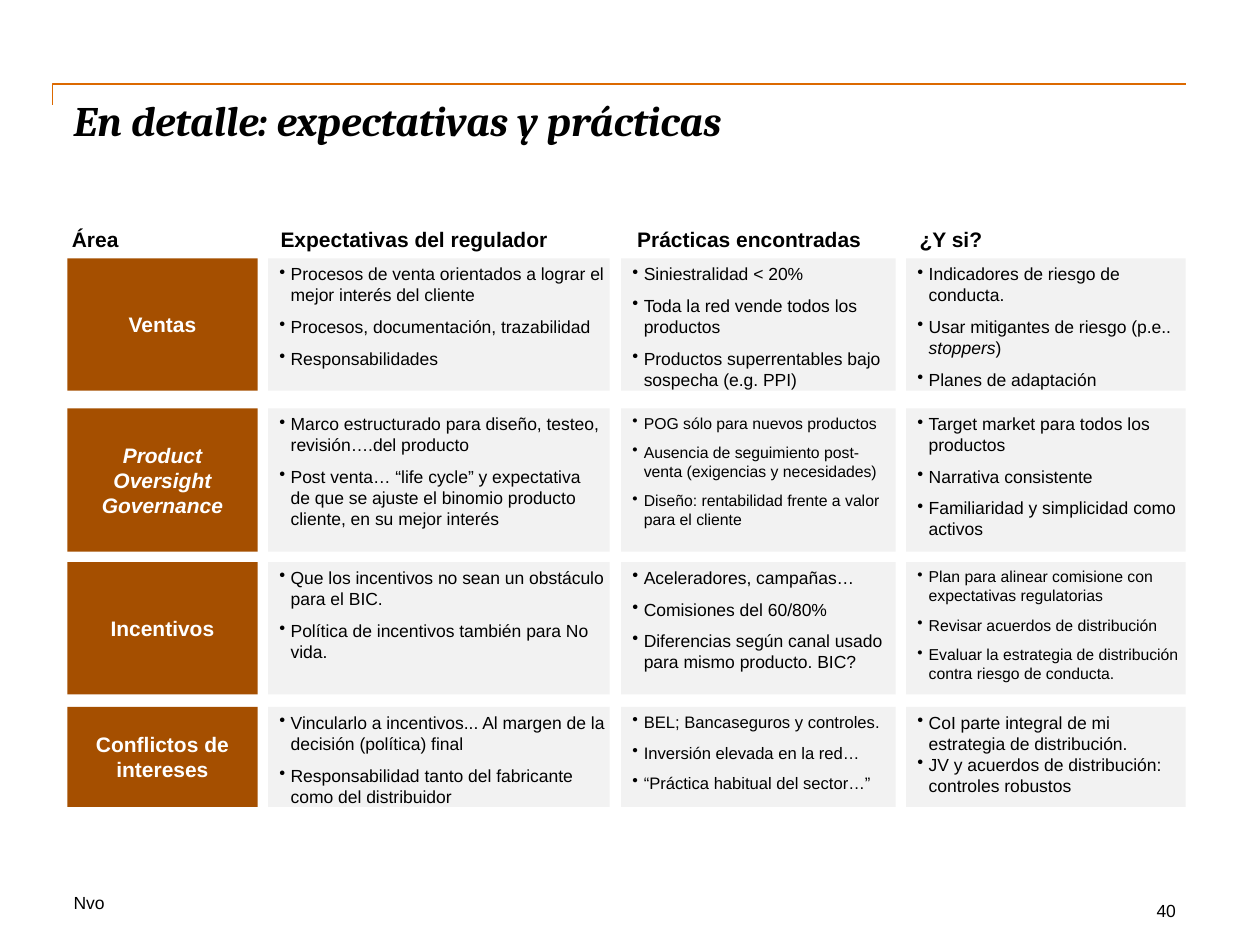
import lxml.etree
import pptx
import pptx.dml.color
import pptx.enum.shapes
import pptx.enum.text
import pptx.oxml.ns
import pptx.util

Pt = pptx.util.Pt
ANCHOR = pptx.enum.text.MSO_ANCHOR
ALIGN = pptx.enum.text.PP_ALIGN

BLACK, WHITE, BROWN, GREY, ORANGE = "000000", "FFFFFF", "A54F00", "F2F2F2", "DC6900"

COLUMNS = [(38.5, 108.7), (153.2, 195.1), (355, 156.8), (517.8, 159.8)]  # left, width
ROWS = [(147.6, 75.6), (233.3, 82), (321.2, 75.6), (404, 57.2)]  # top, height
HEADERS = [("Área", 34), ("Expectativas del regulador", 153.2),
           ("Prácticas encontradas", 357), ("¿Y si?", 518.4)]

# Text between asterisks is italic.
AREAS = [
    ("Ventas", [
        ["Procesos de venta orientados a lograr el mejor interés del cliente",
         "Procesos, documentación, trazabilidad",
         "Responsabilidades"],
        ["Siniestralidad < 20%",
         "Toda la red vende todos los productos",
         "Productos superrentables bajo sospecha (e.g. PPI)"],
        ["Indicadores de riesgo de conducta.",
         "Usar mitigantes de riesgo (p.e.. *stoppers*)",
         "Planes de adaptación"]]),
    ("*Product Oversight Governance*", [
        ["Marco estructurado para diseño, testeo, revisión….del producto",
         "Post venta… “life cycle” y expectativa de que se ajuste el binomio "
         "producto cliente, en su mejor interés"],
        ["POG sólo para nuevos productos",
         "Ausencia de seguimiento post-venta (exigencias y necesidades)",
         "Diseño: rentabilidad frente a valor para el cliente"],
        ["Target market para todos los productos",
         "Narrativa consistente",
         "Familiaridad y simplicidad como activos"]]),
    ("Incentivos", [
        ["Que los incentivos no sean un obstáculo para el BIC.",
         "Política de incentivos también para No vida."],
        ["Aceleradores, campañas…",
         "Comisiones del 60/80%",
         "Diferencias según canal usado para mismo producto. BIC?"],
        ["Plan para alinear comisione con expectativas regulatorias",
         "Revisar acuerdos de distribución",
         "Evaluar la estrategia de distribución contra riesgo de conducta."]]),
    ("Conflictos de intereses", [
        ["Vincularlo a incentivos... Al margen de la decisión (política) final",
         "Responsabilidad tanto del fabricante como del distribuidor"],
        ["BEL; Bancaseguros y controles.",
         "Inversión elevada en la red…",
         "“Práctica habitual del sector…”"],
        ["CoI parte integral de mi estrategia de distribución.",
         "JV y acuerdos de distribución: controles robustos"]]),
]
# Exceptions by (row, column) of the bullet boxes
SIZES = {(1, 1): 9, (2, 2): 9, (3, 1): 9.5}
SPACING = {(3, 2): 0}


def rgb(color):
    return pptx.dml.color.RGBColor.from_string(color)


def set_frame(tf, margins, **format_values):
    names = ("margin_left", "margin_top", "margin_right", "margin_bottom")
    values = dict(zip(names, map(Pt, margins)), word_wrap=True)
    for name, value in (values | format_values).items():
        setattr(tf, name, value)


def write(p, text, size, color=BLACK, font="Arial", bold=False, italic=False):
    for i, part in enumerate(text.split("*")):
        if not part:
            continue
        r = p.add_run()
        r.text = part
        values = {"name": font, "size": Pt(size), "bold": bold,
                  "italic": italic or i % 2 == 1}
        for name, value in values.items():
            setattr(r.font, name, value)
        r.font.color.rgb = rgb(color)


def add_bullet(p):
    pPr = p._p.get_or_add_pPr()
    pPr.set("marL", str(Pt(7.2)))
    pPr.set("indent", str(Pt(-6.5)))
    lxml.etree.SubElement(pPr, pptx.oxml.ns.qn("a:buChar")).set("char", "•")


def add_title(slide, text):
    title = slide.shapes.title
    title.left, title.top, title.width, title.height = map(Pt, (42, 54, 636, 72))
    set_frame(title.text_frame, (0, 0, 0, 0), vertical_anchor=ANCHOR.TOP,
              auto_size=pptx.enum.text.MSO_AUTO_SIZE.NONE)
    p = title.text_frame.paragraphs[0]
    p.alignment = ALIGN.LEFT
    write(p, text, 24, font="Cambria", bold=True, italic=True)


def add_title_rule(slide):
    builder = slide.shapes.build_freeform(Pt(30), Pt(60))
    builder.add_line_segments([(Pt(30), Pt(48)), (Pt(678), Pt(48))], close=False)
    sp = builder.convert_to_shape()
    sp.shadow.inherit = False
    sp.fill.background()
    sp.line.color.rgb = rgb(ORANGE)
    sp.line.width = Pt(1)


def add_label(slide, text, box, size, margins=(7.2, 3.6, 7.2, 3.6), bold=False,
              **format_values):
    tf = slide.shapes.add_textbox(*map(Pt, box)).text_frame
    set_frame(tf, margins, **format_values)
    write(tf.paragraphs[0], text, size, bold=bold)


def add_box(slide, box, fill):
    sp = slide.shapes.add_shape(
        pptx.enum.shapes.MSO_SHAPE.RECTANGLE, *map(Pt, box))
    sp.shadow.inherit = False
    sp.fill.solid()
    sp.fill.fore_color.rgb = rgb(fill)
    sp.line.fill.background()
    return sp.text_frame


def add_area_box(slide, text, box):
    tf = add_box(slide, box, BROWN)
    set_frame(tf, (2.9, 3.6, 2.9, 3.6), vertical_anchor=ANCHOR.MIDDLE)
    p = tf.paragraphs[0]
    p.alignment = ALIGN.CENTER
    write(p, text, 12, WHITE, bold=True)


def add_bullet_box(slide, items, box, size, space_after):
    tf = add_box(slide, box, GREY)
    set_frame(tf, (5.7, 2.9, 2.9, 0), vertical_anchor=ANCHOR.TOP)
    for i, item in enumerate(items):
        p = tf.add_paragraph() if i else tf.paragraphs[0]
        p.alignment = ALIGN.LEFT
        p.space_after = Pt(space_after)
        add_bullet(p)
        write(p, item, size)


def main():
    prs = pptx.Presentation()
    prs.slide_width, prs.slide_height = Pt(720), Pt(540)
    slide = prs.slides.add_slide(prs.slide_layouts[5])
    add_title_rule(slide)
    add_title(slide, "En detalle: expectativas y prácticas")

    for text, left in HEADERS:
        add_label(slide, text, (left, 126.7, 178, 20), 12, bold=True,
                  vertical_anchor=ANCHOR.MIDDLE)
    for row, ((top, height), (area, cells)) in enumerate(zip(ROWS, AREAS)):
        boxes = [(left, top, width, height) for left, width in COLUMNS]
        add_area_box(slide, area, boxes[0])
        for col, (items, box) in enumerate(zip(cells, boxes[1:])):
            add_bullet_box(slide, items, box, SIZES.get((row, col), 10),
                           SPACING.get((row, col), 6))

    add_label(slide, "Nvo", (42, 509.8, 204, 12.2), 10, margins=(0, 0, 0, 0))
    add_label(slide, "40", (653.8, 510.5, 25.9, 19.4), 10, word_wrap=False)
    prs.save("out.pptx")


if __name__ == "__main__":
    main()
